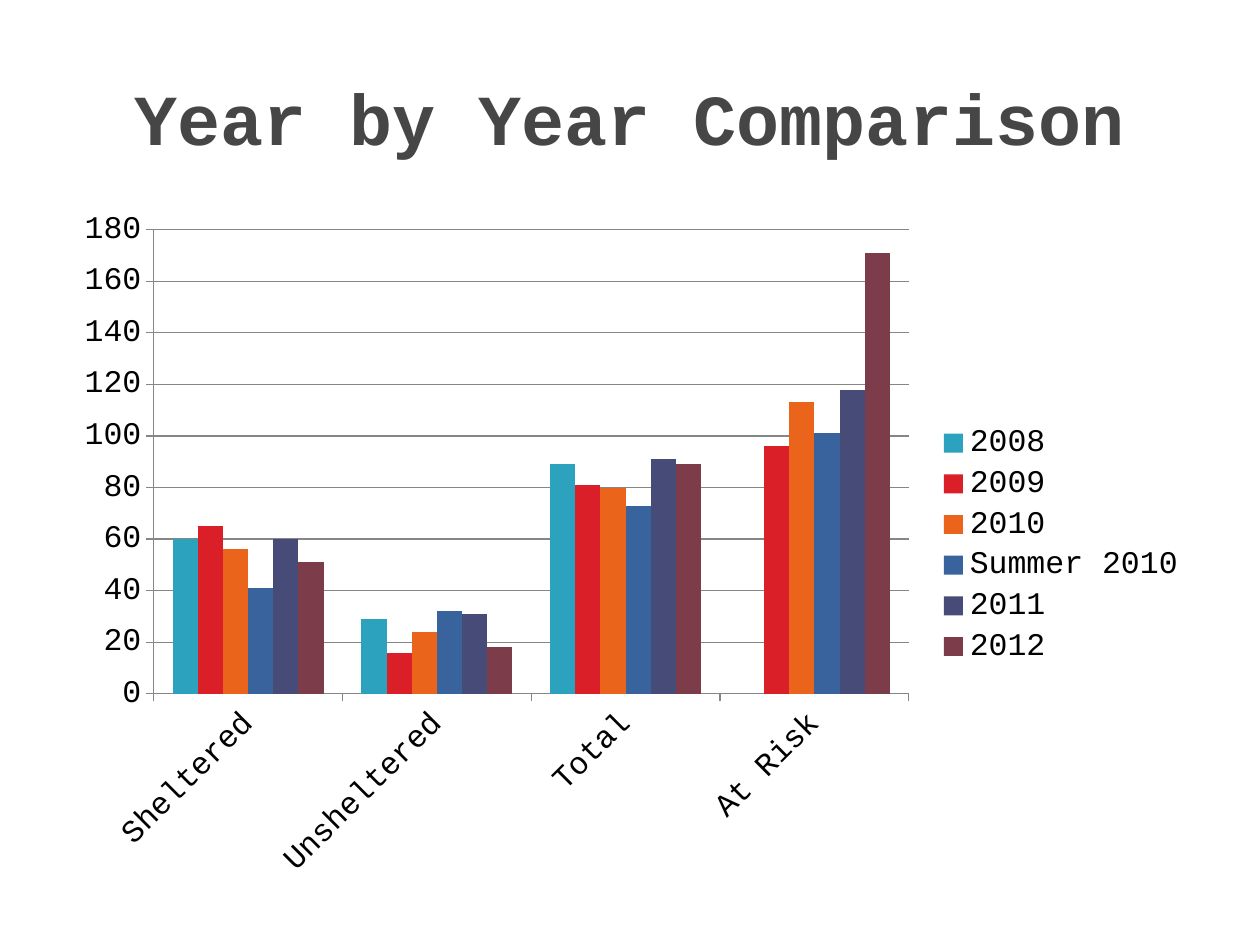
from lxml import etree
from pptx import Presentation
from pptx import util as u
from pptx.chart.data import CategoryChartData
from pptx.dml.color import RGBColor
from pptx.enum import chart as ch, text
from pptx.oxml.ns import qn

FONT = "Courier New"


def paint(fmt, color):
    """Give a fill or a line one solid colour."""
    fill = getattr(fmt, "fill", fmt)
    fill.solid()
    fill.fore_color.rgb = RGBColor.from_string(color)


def place(parent, after, inner=False, **box):
    """Set a manual layout, in shares of the chart's size."""
    for old in parent.findall(qn("c:layout")):
        parent.remove(old)
    layout = etree.Element(qn("c:layout"))
    manual = etree.SubElement(layout, qn("c:manualLayout"))
    values = {"layoutTarget": "inner"} if inner else {}
    values |= {"xMode": "edge", "yMode": "edge", **box}
    for name, value in values.items():
        etree.SubElement(manual, qn(f"c:{name}")).set("val", str(value))
    parent.insert(after, layout)


prs = Presentation()
prs.slide_width, prs.slide_height = u.Inches(10), u.Inches(7.5)
W, H = prs.slide_width, prs.slide_height
s = prs.slides.add_slide(prs.slide_layouts[5])
margin, content_w = int(W * 0.05), int(W * 0.9)

# Title
title = s.shapes.title
title.left, title.top = margin, int(H * 0.04)
title.width, title.height = content_w, u.Inches(1.25)
tf = title.text_frame
tf.vertical_anchor = text.MSO_ANCHOR.MIDDLE
p = tf.paragraphs[0]
p.alignment = text.PP_ALIGN.CENTER
r = p.add_run()
r.text = "Year by Year Comparison"
for name, value in {"name": FONT, "size": u.Pt(41), "bold": True}.items():
    setattr(r.font, name, value)
paint(r.font, "464646")

# Chart data
series = [
    ("2008", (60, 29, 89, None), "2DA2BF"),
    ("2009", (65, 16, 81, 96), "DA1F28"),
    ("2010", (56, 24, 80, 113), "EB641B"),
    ("Summer 2010", (41, 32, 73, 101), "39639D"),
    ("2011", (60, 31, 91, 118), "474B78"),
    ("2012", (51, 18, 89, 171), "7D3C4A"),
]
data = CategoryChartData()
data.categories = ["Sheltered", "Unsheltered", "Total", "At Risk"]
for name, values, _ in series:
    data.add_series(name, values)

# Column chart
chart = s.shapes.add_chart(ch.XL_CHART_TYPE.COLUMN_CLUSTERED, margin, int(H * 0.21),
                           content_w, u.Inches(5.5), data).chart
chart.has_title = False
chart.font.name, chart.font.size = FONT, u.Pt(18)
paint(chart.font, "000000")
plot = chart.plots[0]
plot.gap_width, plot.overlap, plot.vary_by_categories = 150, 0, False
for bars, (_, _, color) in zip(plot.series, series):
    paint(bars.format, color)
    bars.invert_if_negative = False

# Axes
cat_axis, val_axis = chart.category_axis, chart.value_axis
val_axis.minimum_scale, val_axis.maximum_scale, val_axis.major_unit = 0, 180, 20
val_axis.has_major_gridlines = True
for part in (cat_axis, val_axis, val_axis.major_gridlines):
    paint(part.format.line, "868686")
    part.format.line.width = u.Pt(0.75)
for axis in (cat_axis, val_axis):
    axis.major_tick_mark = ch.XL_TICK_MARK.OUTSIDE
    axis.tick_labels.font.size = u.Pt(18)
labels = cat_axis._element.find(qn("c:txPr")).find(qn("a:bodyPr"))
labels.set("rot", str(-45 * 60000))
labels.set("vert", "horz")

# Legend and plot positions
chart.has_legend = True
chart.legend.position = ch.XL_LEGEND_POSITION.RIGHT
chart.legend.include_in_layout = False
place(plot._element.getparent(), 0, inner=True, x=0.08, y=0.045, w=0.666, h=0.67)
place(chart.legend._element, 1, x=0.77, y=0.32, w=0.22, h=0.36)

prs.save("out.pptx")
